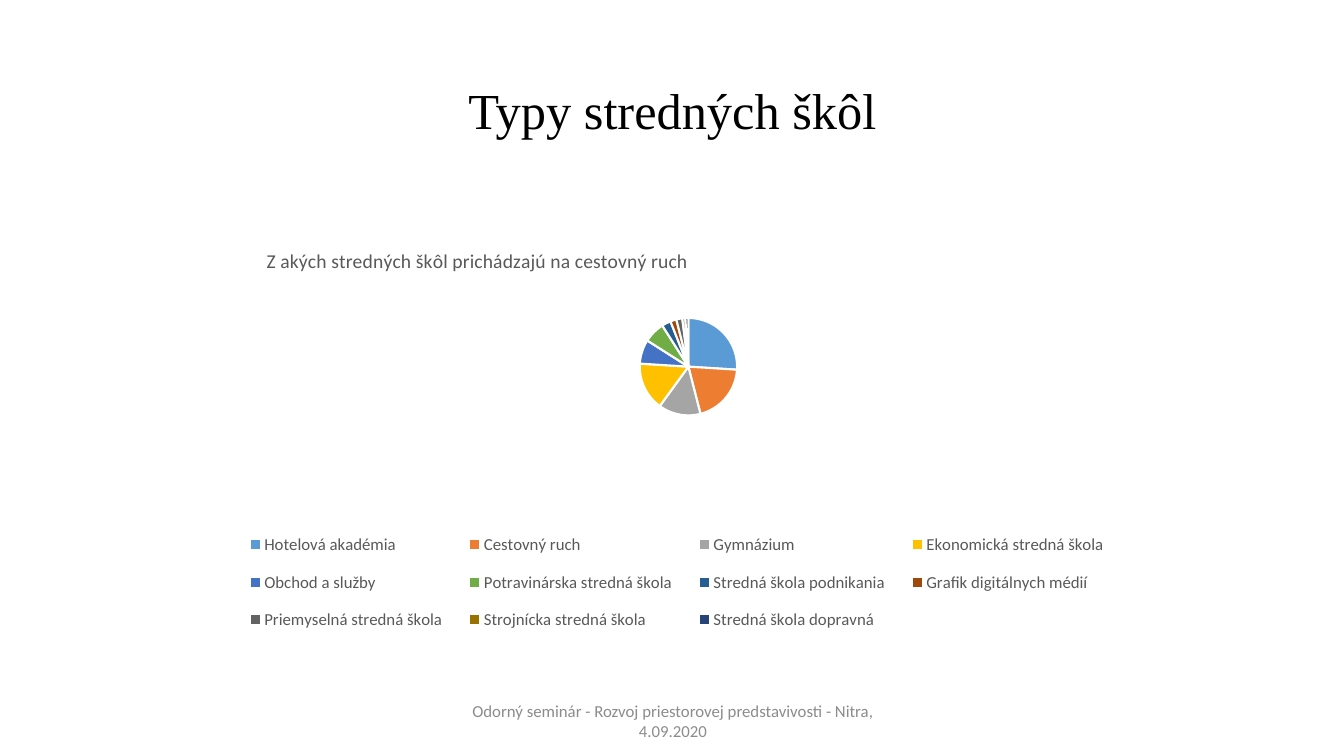
from dataclasses import dataclass

from lxml.etree import SubElement
from pptx import Presentation
from pptx.chart.data import CategoryChartData
from pptx.dml.color import RGBColor
from pptx.enum.chart import XL_CHART_TYPE as ChartType, XL_LEGEND_POSITION as LegendPosition
from pptx.enum.text import MSO_ANCHOR as Anchor, PP_ALIGN as Align
from pptx.oxml.ns import qn
from pptx.util import Pt

TITLE = "Typy stredných škôl"
CHART_TITLE = "Z akých stredných škôl prichádzajú na cestovný ruch"
FOOTER = "Odorný seminár - Rozvoj priestorovej predstavivosti - Nitra, 4.09.2020"
SCHOOLS = [  # name, share, slice colour
    ("Hotelová akadémia", 26, "5B9BD5"),
    ("Cestovný ruch", 20, "ED7D31"),
    ("Gymnázium", 14, "A5A5A5"),
    ("Ekonomická stredná škola", 16, "FFC000"),
    ("Obchod a služby", 8, "4472C4"),
    ("Potravinárska stredná škola", 7, "70AD47"),
    ("Stredná škola podnikania", 3, "255E91"),
    ("Grafik digitálnych médií", 2, "9E480E"),
    ("Priemyselná stredná škola", 2, "636363"),
    ("Strojnícka stredná škola", 1, "997300"),
    ("Stredná škola dopravná", 1, "264478"),
]

# Boxes in px: left, top, width, height
SLIDE_SIZE = (1344, 756)
TITLE_BOX = (93, 40, 1159, 146)
CHART_BOX = (102, 202, 1150, 464)
FOOTER_BOX = (446, 701, 454, 40)

# Shares of the chart area: x, y and, where sized, w, h
CHART_TITLE_LAYOUT = (0.14, 0.09)
PLOT_LAYOUT = (0.04, 0.25, 0.94, 0.21)
LEGEND_LAYOUT = (0.11, 0.68, 0.78, 0.28)


@dataclass(frozen=True)
class Theme:
    heading_font: str = "Times New Roman"
    body_font: str = "Calibri"
    heading: str = "000000"
    chart_text: str = "595959"
    footer: str = "8C8C8C"
    slice_edge: str = "FFFFFF"
    heading_size: int = 36
    chart_title_size: int = 14
    text_size: int = 12


THEME = Theme()


def emu(*lengths):
    return [round(length * 914400 / 100.8) for length in lengths]


def set_font(font, name, size, color):
    font.name, font.size, font.bold = name, Pt(size), False
    font.color.rgb = RGBColor.from_string(color)


def set_layout(element, shares, inner=False):
    """Pin a chart part to fixed shares of the chart area."""
    layout = element.find(qn("c:layout"))
    if layout is None:
        layout = SubElement(element, qn("c:layout"))
        anchors = [element.find(qn(tag)) for tag in ("c:tx", "c:legendPos")]
        next(a for a in anchors if a is not None).addnext(layout)
    for child in list(layout):
        layout.remove(child)
    manual = SubElement(layout, qn("c:manualLayout"))
    if inner:
        SubElement(manual, qn("c:layoutTarget")).set("val", "inner")
    for mode in ("xMode", "yMode"):
        SubElement(manual, qn(f"c:{mode}")).set("val", "edge")
    for side, share in zip("xywh", shares):
        SubElement(manual, qn(f"c:{side}")).set("val", str(share))


def add_title(page):
    title = page.shapes.title
    title.left, title.top, title.width, title.height = emu(*TITLE_BOX)
    title.text_frame.text = TITLE
    title.text_frame.vertical_anchor = Anchor.MIDDLE
    para = title.text_frame.paragraphs[0]
    para.alignment, para.line_spacing = Align.CENTER, 0.9
    set_font(para.font, THEME.heading_font, THEME.heading_size, THEME.heading)


def add_pie(page):
    data = CategoryChartData()
    data.categories = [name for name, _, _ in SCHOOLS]
    data.add_series("Series 1", [share for _, share, _ in SCHOOLS])
    chart = page.shapes.add_chart(ChartType.PIE, *emu(*CHART_BOX), data).chart
    set_font(chart.font, THEME.body_font, THEME.text_size, THEME.chart_text)

    chart.has_title = True
    chart.chart_title.text_frame.text = CHART_TITLE
    set_font(chart.chart_title.text_frame.paragraphs[0].font,
             THEME.body_font, THEME.chart_title_size, THEME.chart_text)
    chart.chart_title.include_in_layout = False

    chart.has_legend = True
    chart.legend.position = LegendPosition.BOTTOM
    chart.legend.include_in_layout = False
    set_font(chart.legend.font, THEME.body_font, THEME.text_size, THEME.chart_text)

    plot = chart.plots[0]
    plot.vary_by_categories = True
    for index, (_, _, color) in enumerate(SCHOOLS):
        style = plot.series[0].points[index].format
        style.fill.solid()
        style.fill.fore_color.rgb = RGBColor.from_string(color)
        style.line.width = Pt(1.5)
        style.line.color.rgb = RGBColor.from_string(THEME.slice_edge)

    root = chart.element.find(qn("c:chart"))
    set_layout(root.find(qn("c:title")), CHART_TITLE_LAYOUT)
    set_layout(root.find(qn("c:legend")), LEGEND_LAYOUT)
    plot_area = root.find(qn("c:plotArea"))
    if plot_area.find(qn("c:layout")) is None:
        plot_area.insert(0, plot_area.makeelement(qn("c:layout")))
    set_layout(plot_area, PLOT_LAYOUT, inner=True)


def add_footer(page):
    frame = page.shapes.add_textbox(*emu(*FOOTER_BOX)).text_frame
    frame.word_wrap = True
    frame.vertical_anchor = Anchor.MIDDLE
    frame.text = FOOTER
    para = frame.paragraphs[0]
    para.alignment = Align.CENTER
    set_font(para.font, THEME.body_font, THEME.text_size, THEME.footer)


def main():
    deck = Presentation()
    deck.slide_width, deck.slide_height = emu(*SLIDE_SIZE)
    title_only = deck.slide_layouts[5]
    page = deck.slides.add_slide(title_only)
    add_title(page)
    add_pie(page)
    add_footer(page)
    deck.save("out.pptx")


if __name__ == "__main__":
    main()
